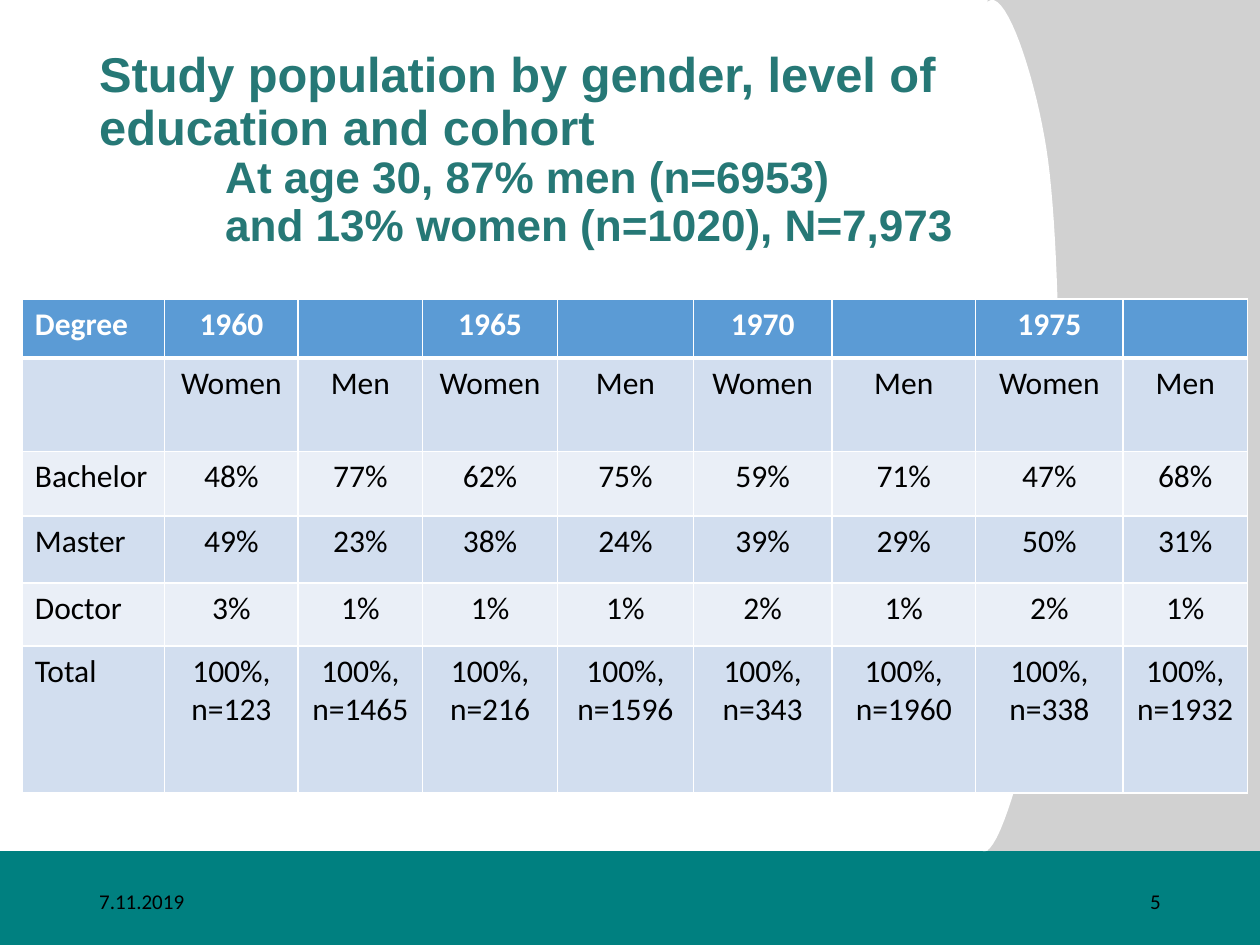
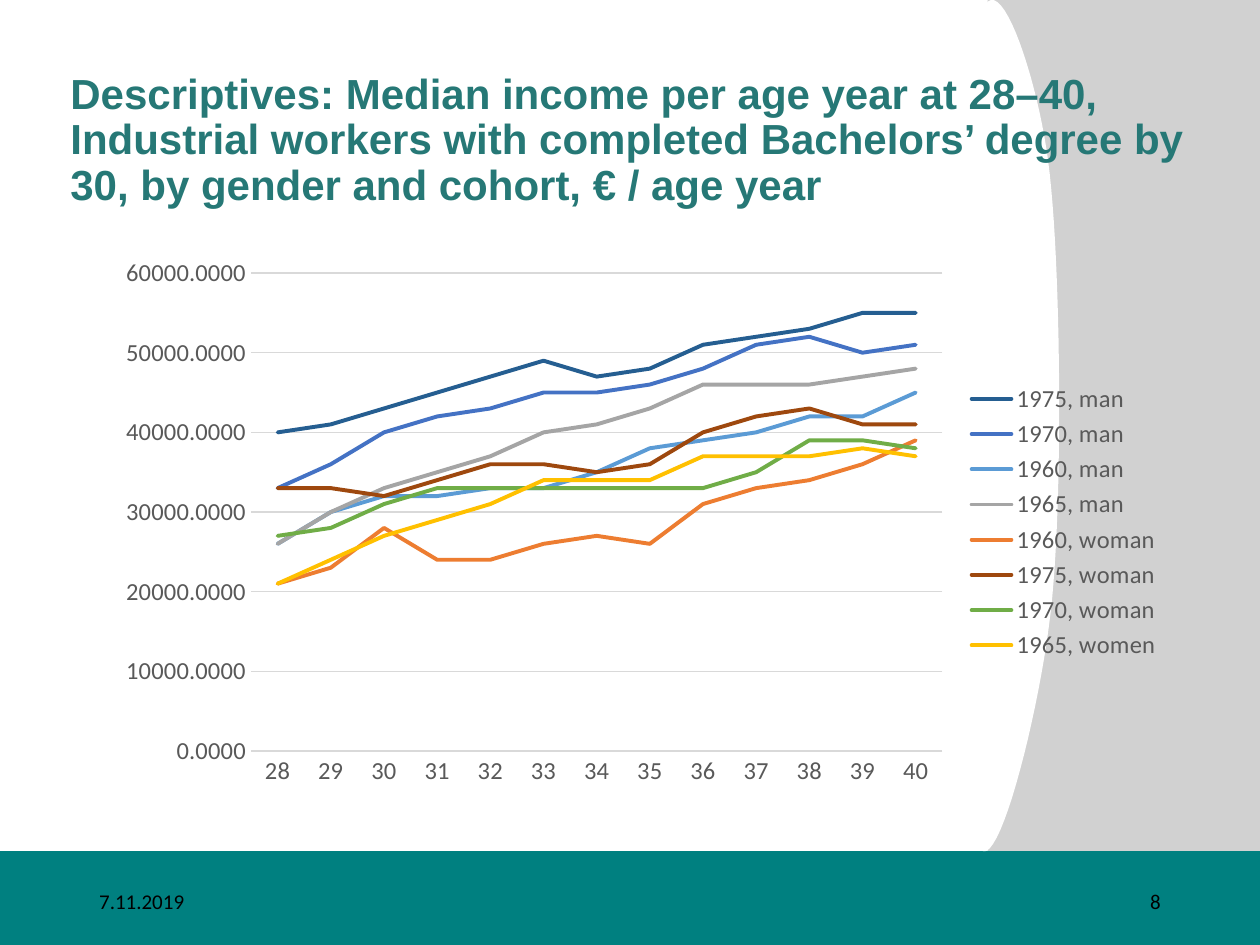
import pptx
import pptx.chart.data
import pptx.dml.color
import pptx.enum.chart
import pptx.enum.shapes
import pptx.enum.text
import pptx.oxml
import pptx.oxml.ns
import pptx.util
from pptx.util import Cm, Pt

COLORS = {
    "title": "267876", "band": "008080", "side": "A5A5A5", "white": "FFFFFF",
    "black": "000000", "header": "5B9BD5", "row_dark": "D2DEEF",
    "row_light": "EAEFF7", "chart_text": "595959", "grid": "D9D9D9",
}
DATE = "7.11.2019"

# Start point, then (control, control, end) for each curve, in cm
LEAF_START = (19.69, 0.84)
LEAF_CURVES = [
    ((19.91, -1.4), (20.88, 1.32), (21.13, 3.25)),
    ((21.39, 5.18), (21.44, 10.13), (21.18, 12.34)),
    ((20.93, 14.58), (19.89, 18.57), (19.63, 16.66)),
    ((19.38, 14.73), (19.43, 3.07), LEAF_START),
]

POPULATION_TITLE = (
    "Study population by gender, level of education and cohort"
    "\v\tAt age 30, 87% men (n=6953)"
    "\v\tand 13% women (n=1020), N=7,973"
)
POPULATION_ROWS = [
    ["Degree", "1960", "", "1965", "", "1970", "", "1975", ""],
    [""] + ["Women", "Men"] * 4,
    ["Bachelor", "48%", "77%", "62%", "75%", "59%", "71%", "47%", "68%"],
    ["Master", "49%", "23%", "38%", "24%", "39%", "29%", "50%", "31%"],
    ["Doctor", "3%", "1%", "1%", "1%", "2%", "1%", "2%", "1%"],
    ["Total"] + [f"100%, n={count}" for count in
                 (123, 1465, 216, 1596, 343, 1960, 338, 1932)],
]
COLUMN_WIDTHS = [2.87, 2.69, 2.51, 2.72, 2.74, 2.79, 2.9, 2.97, 2.51]
ROW_HEIGHTS = [1.19, 1.88, 1.3, 1.35, 1.27, 2.97]

INCOME_TITLE = (
    "Descriptives: Median income per age year at 28–40, Industrial workers with "
    "completed Bachelors’ degree by 30, by gender and cohort, € / age year"
)
AGES = [str(age) for age in range(28, 41)]
INCOMES = [  # name, line colour, median income by age in thousands of euros
    ("1975, man", "255E91", [40, 41, 43, 45, 47, 49, 47, 48, 51, 52, 53, 55, 55]),
    ("1970, man", "4472C4", [33, 36, 40, 42, 43, 45, 45, 46, 48, 51, 52, 50, 51]),
    ("1960, man", "5B9BD5", [26, 30, 32, 32, 33, 33, 35, 38, 39, 40, 42, 42, 45]),
    ("1965, man", "A5A5A5", [26, 30, 33, 35, 37, 40, 41, 43, 46, 46, 46, 47, 48]),
    ("1960, woman", "ED7D31", [21, 23, 28, 24, 24, 26, 27, 26, 31, 33, 34, 36, 39]),
    ("1975, woman", "9E480E", [33, 33, 32, 34, 36, 36, 35, 36, 40, 42, 43, 41, 41]),
    ("1970, woman", "70AD47", [27, 28, 31, 33, 33, 33, 33, 33, 33, 35, 39, 39, 38]),
    ("1965, women", "FFC000", [21, 24, 27, 29, 31, 34, 34, 34, 37, 37, 37, 38, 37]),
]


def rgb(value):
    return pptx.dml.color.RGBColor.from_string(value)


def style_font(font, size, color, name="Calibri", bold=False):
    font.size, font.name, font.bold = Pt(size), name, bold
    font.color.rgb = rgb(color)


def paint(shape, color):
    shape.shadow.inherit = False
    shape.fill.solid()
    shape.fill.fore_color.rgb = rgb(color)
    shape.line.fill.background()


def add_rectangle(page, color, *frame):
    kind = pptx.enum.shapes.MSO_SHAPE.RECTANGLE
    box = page.shapes.add_shape(kind, *map(Cm, frame))
    paint(box, color)
    return box


def add_text(page, text, frame, align=pptx.enum.text.PP_ALIGN.LEFT):
    """Add a wrapped, vertically centred text box and return its paragraph."""
    text_frame = page.shapes.add_textbox(*map(Cm, frame)).text_frame
    text_frame.word_wrap = True
    text_frame.vertical_anchor = pptx.enum.text.MSO_ANCHOR.MIDDLE
    para = text_frame.paragraphs[0]
    para.text = text
    para.alignment = align
    return para


def leaf_points(steps=24):
    """Return points along the leaf's Bezier curves."""
    points, start = [], LEAF_START
    for first, second, end in LEAF_CURVES:
        for step in range(1, steps + 1):
            t = step / steps
            u = 1 - t
            points.append(tuple(
                Cm(u**3 * a + 3 * u**2 * t * b + 3 * u * t**2 * c + t**3 * d)
                for a, b, c, d in zip(start, first, second, end)))
        start = end
    return points


def add_page(deck, number):
    """Add a slide with the side panel, bottom band, leaf and footers."""
    page = deck.slides.add_slide(deck.slide_layouts[6])
    side = add_rectangle(page, COLORS["side"], 19.91, 0, 5.49, 18.67)
    side_color = side.fill._xPr.find(".//" + pptx.oxml.ns.qn("a:srgbClr"))
    side_color.append(pptx.oxml.parse_xml(
        f'<a:alpha {pptx.oxml.ns.nsdecls("a")} val="50000"/>'))
    add_rectangle(page, COLORS["band"], 0, 17.16, 25.4, 1.89)

    outline = page.shapes.build_freeform(*map(Cm, LEAF_START))
    outline.add_line_segments(leaf_points(), close=True)
    paint(outline.convert_to_shape(), COLORS["white"])

    align = pptx.enum.text.PP_ALIGN
    for text, left, side_align in ((DATE, 1.75, align.LEFT),
                                   (str(number), 17.93, align.RIGHT)):
        para = add_text(page, text, (left, 17.65, 5.72, 1.02), side_align)
        style_font(para.runs[0].font, 12, COLORS["black"])
    return page


def add_title(page, text, frame, size, detail_size=None):
    """Add a title; lines after a break take detail_size and a 1-inch tab."""
    para = add_text(page, text, frame)
    para.line_spacing = 0.9
    para._p.get_or_add_pPr().append(pptx.oxml.parse_xml(
        f'<a:tabLst {pptx.oxml.ns.nsdecls("a")}>'
        f'<a:tab pos="{Cm(2.54)}" algn="l"/></a:tabLst>'))
    for index, span in enumerate(para.runs):
        span_size = detail_size if index else size
        style_font(span.font, span_size, COLORS["title"], "Arial", True)


def set_borders(cell, bottom_width):
    properties = cell._tc.get_or_add_tcPr()
    for index, edge in enumerate("LRTB"):
        width = Pt(bottom_width if edge == "B" else 1)
        properties.insert(index, pptx.oxml.parse_xml(
            f'<a:ln{edge} {pptx.oxml.ns.nsdecls("a")} w="{width}"><a:solidFill>'
            f'<a:srgbClr val="{COLORS["white"]}"/></a:solidFill></a:ln{edge}>'))


def add_population_table(page):
    table = page.shapes.add_table(
        len(ROW_HEIGHTS), len(COLUMN_WIDTHS), Cm(0.45), Cm(6.03),
        Cm(sum(COLUMN_WIDTHS)), Cm(sum(ROW_HEIGHTS))).table
    for column, width in zip(table.columns, COLUMN_WIDTHS):
        column.width = Cm(width)
    for row_index, texts in enumerate(POPULATION_ROWS):
        table.rows[row_index].height = Cm(ROW_HEIGHTS[row_index])
        header = row_index == 0
        stripe = "row_dark" if row_index % 2 else "row_light"
        text_color = COLORS["white" if header else "black"]
        for column_index, text in enumerate(texts):
            cell = table.cell(row_index, column_index)
            cell.fill.solid()
            cell.fill.fore_color.rgb = rgb(COLORS["header" if header else stripe])
            set_borders(cell, 3 if header else 1)
            para = cell.text_frame.paragraphs[0]
            para.text = text
            if column_index:
                para.alignment = pptx.enum.text.PP_ALIGN.CENTER
            for span in para.runs:
                style_font(span.font, 18, text_color, bold=header)


def style_line(line, color, width):
    line.color.rgb = rgb(color)
    line.width = Pt(width)


def add_income_chart(page):
    data = pptx.chart.data.CategoryChartData(number_format="###0.0000")
    data.categories = AGES
    for name, _, thousands in INCOMES:
        data.add_series(name, [value * 1000 for value in thousands])
    chart = page.shapes.add_chart(
        pptx.enum.chart.XL_CHART_TYPE.LINE,
        Cm(2.11), Cm(4.98), Cm(21.56), Cm(11.09), data).chart
    chart.has_title = False
    style_font(chart.font, 14, COLORS["black"])
    chart.plots[0].vary_by_categories = False
    for series, (_, color, _) in zip(chart.plots[0].series, INCOMES):
        series.smooth = False
        series.marker.style = pptx.enum.chart.XL_MARKER_STYLE.NONE
        line = series.format.line
        style_line(line, color, 2.25)
        line._get_or_add_ln().set("cap", "rnd")

    ages, income = chart.category_axis, chart.value_axis
    for axis in (ages, income):
        axis.major_tick_mark = axis.minor_tick_mark = pptx.enum.chart.XL_TICK_MARK.NONE
        style_font(axis.tick_labels.font, 14, COLORS["chart_text"])
    style_line(ages.format.line, COLORS["grid"], 0.75)
    income.format.line.fill.background()
    income.minimum_scale, income.maximum_scale, income.major_unit = 0, 60000, 10000
    income.has_major_gridlines = True
    style_line(income.major_gridlines.format.line, COLORS["grid"], 0.75)
    income.tick_labels.number_format = "###0.0000"
    income.tick_labels.number_format_is_linked = False

    chart.has_legend = True
    chart.legend.position = pptx.enum.chart.XL_LEGEND_POSITION.RIGHT
    chart.legend.include_in_layout = False
    style_font(chart.legend.font, 14, COLORS["chart_text"])


def main():
    deck = pptx.Presentation()
    deck.slide_width, deck.slide_height = Cm(25.4), Cm(19.05)

    population = add_page(deck, 5)
    add_title(population, POPULATION_TITLE, (1.75, 0.81, 21.62, 4.45), 27.9, 25.2)
    add_population_table(population)

    income = add_page(deck, 8)
    add_title(income, INCOME_TITLE, (1.17, 1.01, 23.37, 3.68), 24)
    add_income_chart(income)

    deck.save("out.pptx")


if __name__ == "__main__":
    main()
